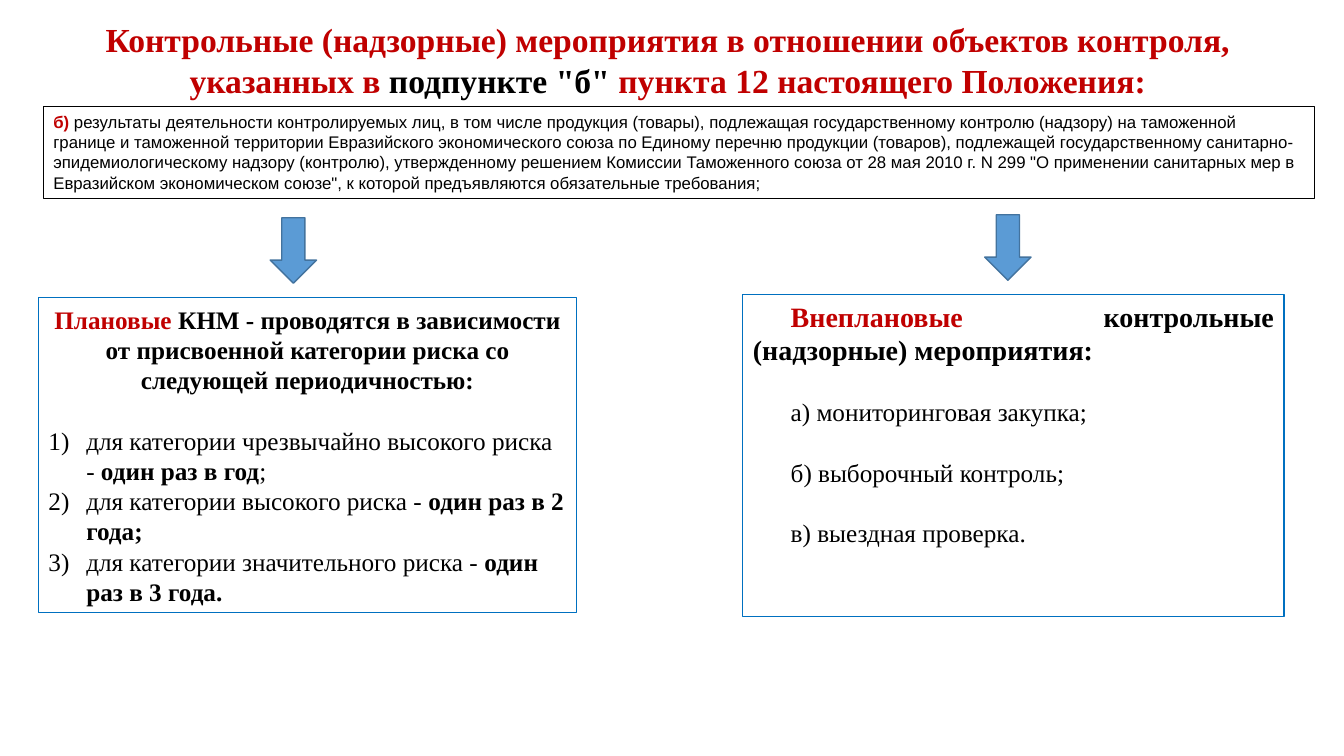
"""Build a slide on planned and unplanned control measures for item "б" objects."""
from lxml import etree
from pptx import Presentation
from pptx.dml.color import RGBColor
from pptx.enum.shapes import MSO_SHAPE
from pptx.enum.text import MSO_ANCHOR, MSO_AUTO_SIZE, PP_ALIGN
from pptx.oxml.ns import qn
from pptx.util import Pt

RECTANGLE, DOWN_ARROW = MSO_SHAPE.RECTANGLE, MSO_SHAPE.DOWN_ARROW
TOP, MIDDLE = MSO_ANCHOR.TOP, MSO_ANCHOR.MIDDLE
LEFT, CENTER, JUSTIFY = PP_ALIGN.LEFT, PP_ALIGN.CENTER, PP_ALIGN.JUSTIFY
NO_AUTOFIT = MSO_AUTO_SIZE.NONE

THEME = {
    "red": RGBColor.from_string("C00000"),
    "black": RGBColor.from_string("000000"),
    "frame": RGBColor.from_string("0070C0"),
    "arrow": RGBColor.from_string("5B9BD5"),
    "arrow_edge": RGBColor.from_string("43739E"),
    "serif": "Times New Roman",
    "sans": "Arial",
    "title": Pt(24),
    "heading": Pt(20),
    "body": Pt(18),
    "note": Pt(12),
}
INDENT = 27
BLANK_LINE = 21.6


def place(shape, box, anchor, line=None, line_width=0.75):
    """Position a shape, prepare its text frame and outline it."""
    for name, value in zip(("left", "top", "width", "height"), box):
        setattr(shape, name, Pt(value))
    frame_format = {"word_wrap": True, "auto_size": NO_AUTOFIT, "vertical_anchor": anchor}
    for name, value in frame_format.items():
        setattr(shape.text_frame, name, value)
    if line:
        shape.line.color.rgb = THEME[line]
        shape.line.width = Pt(line_width)


def write(shape, paragraphs, font_name):
    """Fill a shape with (runs, size, alignment, margin, indent, gap, bullet) paragraphs."""
    frame = shape.text_frame
    for index, (runs, size, alignment, margin, indent, gap, bullet) in enumerate(paragraphs):
        paragraph = frame.add_paragraph() if index else frame.paragraphs[0]
        spacing = {"alignment": alignment, "space_before": Pt(0), "space_after": Pt(gap)}
        for name, value in spacing.items():
            setattr(paragraph, name, value)
        properties = paragraph._p.get_or_add_pPr()
        properties.set("marL", str(Pt(margin)))
        properties.set("indent", str(Pt(indent)))
        if bullet:
            etree.SubElement(properties, qn("a:buFont"), typeface="+mj-lt")
            etree.SubElement(properties, qn("a:buAutoNum"), type=bullet)
        else:
            etree.SubElement(properties, qn("a:buNone"))
        for text, color, bold in runs:
            run = paragraph.add_run()
            run.text = text
            font_format = {"name": font_name, "size": THEME[size], "bold": bold}
            for name, value in font_format.items():
                setattr(run.font, name, value)
            run.font.color.rgb = THEME[color]


presentation = Presentation()
presentation.slide_width, presentation.slide_height = Pt(960), Pt(540)
slide = presentation.slides.add_slide(presentation.slide_layouts[3])
title, planned, unplanned = slide.placeholders

place(title, (28.1, 10.1, 897.8, 65.5), TOP)
title_runs = [
    ("Контрольные (надзорные) мероприятия в отношении объектов контроля, указанных в ", "red", True),
    ("подпункте \"б\"", "black", True),
    (" пункта 12 настоящего Положения:", "red", True),
]
write(title, [(title_runs, "title", CENTER, 0, 0, 0, None)], THEME["serif"])

definition = slide.shapes.add_shape(RECTANGLE, 0, 0, 0, 0)
definition.shadow.inherit = False
definition.fill.background()
place(definition, (31, 76.3, 907.9, 65.5), TOP, "black")
definition_runs = [
    ("б)", "red", True),
    (" результаты деятельности контролируемых лиц, в том числе продукция (товары), "
     "подлежащая государственному контролю (надзору) на таможенной границе и таможенной "
     "территории Евразийского экономического союза по Единому перечню продукции (товаров), "
     "подлежащей государственному санитарно-эпидемиологическому надзору (контролю), "
     "утвержденному решением Комиссии Таможенного союза от 28 мая 2010 г. N 299 "
     "\"О применении санитарных мер в Евразийском экономическом союзе\", "
     "к которой предъявляются обязательные требования;", "black", False),
]
write(definition, [(definition_runs, "note", LEFT, 0, 0, 0, None)], THEME["sans"])

for left, top in ((193, 155.5), (703.4, 153.4)):
    arrow = slide.shapes.add_shape(DOWN_ARROW, 0, 0, 0, 0)
    arrow.shadow.inherit = False
    arrow.fill.solid()
    arrow.fill.fore_color.rgb = THEME["arrow"]
    place(arrow, (left, top, 33.1, 46.8), MIDDLE, "arrow_edge", 1)

place(planned, (27.4, 212.4, 384.5, 225.4), MIDDLE, "frame")
planned_heading = [
    ("Плановые ", "red", True),
    ("КНМ - проводятся в зависимости от присвоенной категории риска со следующей "
     "периодичностью:", "black", True),
]
planned_paragraphs = [(planned_heading, "body", CENTER, 0, 0, BLANK_LINE, None)]
for category, frequency, ending in (
    ("чрезвычайно высокого", "один раз в год", ";"),
    ("высокого", "один раз в 2 года;", ""),
    ("значительного", "один раз в 3 года.", ""),
):
    runs = [(f"для категории {category} риска - ", "black", False), (frequency, "black", True)]
    if ending:
        runs.append((ending, "black", False))
    planned_paragraphs.append((runs, "body", LEFT, INDENT, -INDENT, 0, "arabicParenR"))
write(planned, planned_paragraphs, THEME["serif"])

place(unplanned, (530.6, 210.2, 386.6, 230.4), TOP, "frame")
unplanned_heading = [
    ("Внеплановые", "red", True),
    (" контрольные (надзорные) мероприятия:", "black", True),
]
unplanned_paragraphs = [(unplanned_heading, "heading", JUSTIFY, 0, INDENT, BLANK_LINE, None)]
for measure in ("а) мониторинговая закупка;", "б) выборочный контроль;", "в) выездная проверка."):
    runs = [(measure, "black", False)]
    unplanned_paragraphs.append((runs, "body", JUSTIFY, 0, INDENT, BLANK_LINE, None))
write(unplanned, unplanned_paragraphs, THEME["serif"])

presentation.save("out.pptx")
